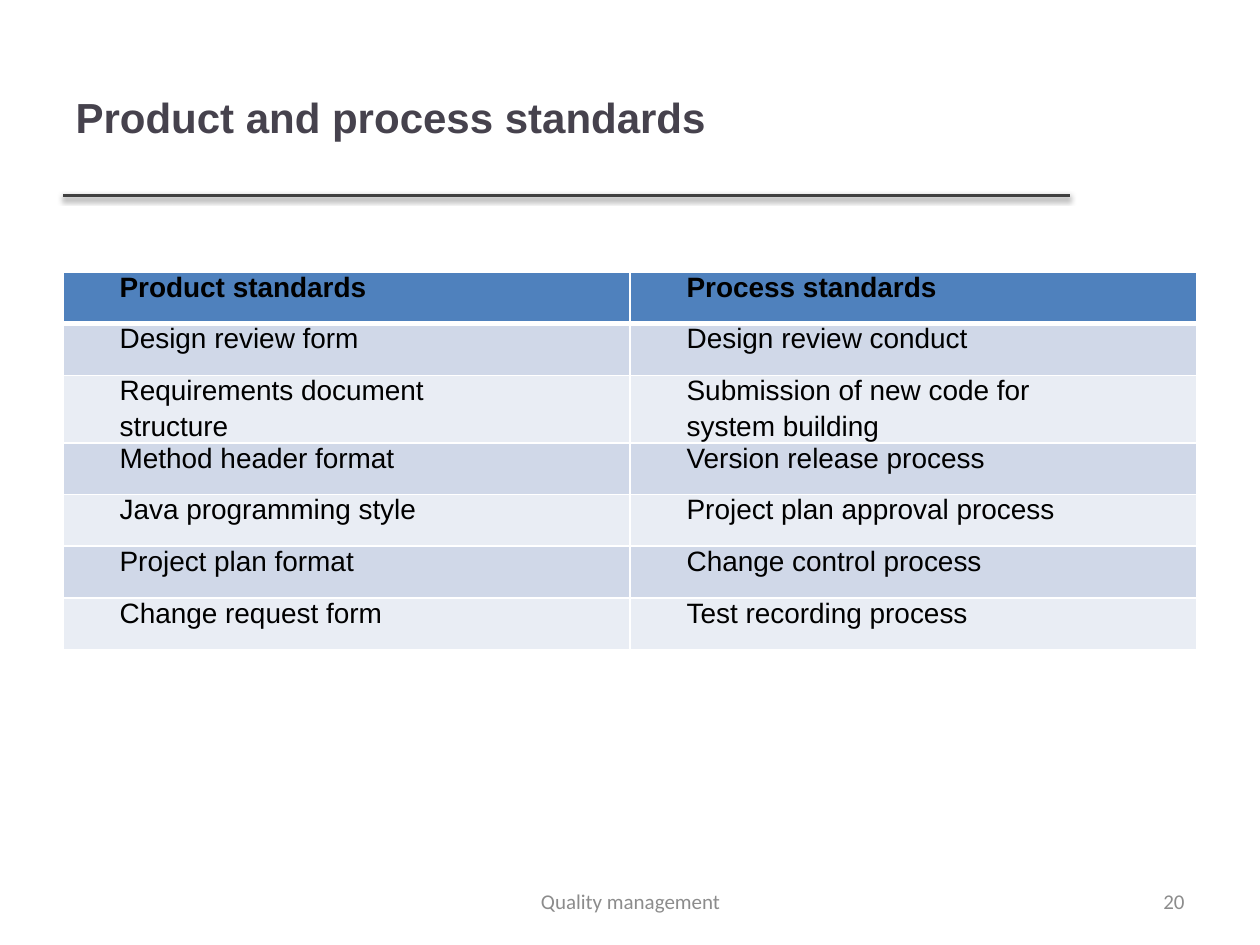
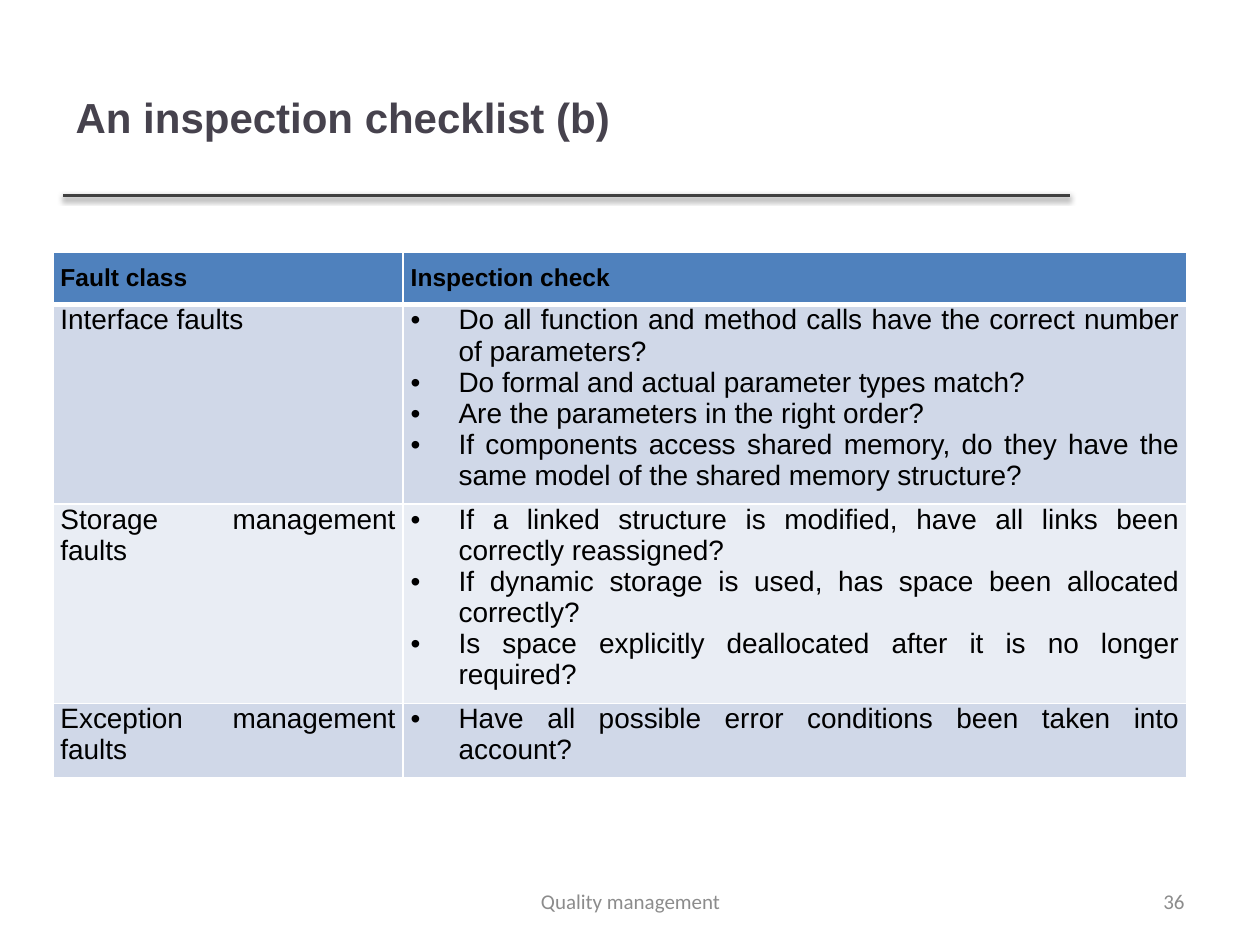
"""Build two quality management slides, each with a title, a rule, a table and a footer."""
from lxml import etree
from pptx import Presentation
from pptx.dml.color import RGBColor
from pptx.enum.shapes import MSO_CONNECTOR
from pptx.enum.text import MSO_ANCHOR, MSO_AUTO_SIZE, PP_ALIGN
from pptx.oxml import parse_xml
from pptx.oxml.ns import nsdecls, qn
from pptx.util import Inches, Pt

TITLE_COLOR = RGBColor(0x46, 0x42, 0x4D)
RULE_COLOR = RGBColor(0x40, 0x40, 0x40)
FOOTER_COLOR = RGBColor(0x8C, 0x8C, 0x8C)
TEXT_COLOR = RGBColor(0x00, 0x00, 0x00)
HEADER_FILL = RGBColor(0x4F, 0x81, 0xBD)
BAND_FILLS = [RGBColor(0xE9, 0xED, 0xF4), RGBColor(0xD0, 0xD8, 0xE8)]
BORDER_COLOR = RGBColor(0xFF, 0xFF, 0xFF)

RULE_SHADOW = f"""<a:effectLst {nsdecls("a")}>
  <a:outerShdw blurRad="{Pt(3.1)}" dist="{Pt(1.6)}" dir="5400000" rotWithShape="0">
    <a:srgbClr val="000000"><a:alpha val="38000"/></a:srgbClr>
  </a:outerShdw>
</a:effectLst>"""

STANDARDS = {
    "title": "Product and process standards",
    "number": "20",
    "position": (0.5, 2.16),
    "columns": [4.5, 4.5],
    "heights": [0.41, 0.41, 0.53, 0.41, 0.41, 0.41, 0.41],
    "side_margin": 0.07,
    "header_margin": 0,
    "bottom_margin": 0,
    "header_size": 16,
    "space_after": 3,
    "first_column_align": PP_ALIGN.LEFT,
    "indents": [(0, 0.38), (0, 0.38)],
    "bulleted": False,
    "rows": [
        (["Product standards"], ["Process standards"]),
        (["Design review form"], ["Design review conduct"]),
        (["Requirements document", "structure"],
         ["Submission of new code for", "system building"]),
        (["Method header format"], ["Version release process"]),
        (["Java programming style"], ["Project plan approval process"]),
        (["Project plan format"], ["Change control process"]),
        (["Change request form"], ["Test recording process"]),
    ],
}
CHECKLIST = {
    "title": "An inspection checklist (b)",
    "number": "36",
    "position": (0.42, 2),
    "columns": [2.78, 6.22],
    "heights": [0.41, 1.58, 1.58, 0.59],
    "side_margin": 0.06,
    "header_margin": 0.1,
    "bottom_margin": 0.1,
    "header_size": 14,
    "space_after": 0,
    "first_column_align": PP_ALIGN.JUSTIFY,
    "indents": [(0, 0), (0.38, -0.38)],
    "bulleted": True,
    "rows": [
        (["Fault class"], ["Inspection check"]),
        (["Interface faults"],
         ["Do all function and method calls have the correct number of parameters?",
          "Do formal and actual parameter types match?",
          "Are the parameters in the right order?",
          "If components access shared memory, do they have the same model of "
          "the shared memory structure?"]),
        (["Storage management faults"],
         ["If a linked structure is modified, have all links been correctly reassigned?",
          "If dynamic storage is used, has space been allocated correctly?",
          "Is space explicitly deallocated after it is no longer required?"]),
        (["Exception management faults"],
         ["Have all possible error conditions been taken into account?"]),
    ],
}


def format_runs(paragraph, name, size, color, bold=False):
    for run in paragraph.runs:
        run.font.name = name
        run.font.size = Pt(size)
        run.font.color.rgb = color
        run.font.bold = bold


def add_borders(cell, bottom_width):
    properties = cell._tc.get_or_add_tcPr()
    widths = {"lnL": 1, "lnR": 1, "lnT": 1, "lnB": bottom_width}
    for index, (edge, width) in enumerate(widths.items()):
        line = etree.Element(qn(f"a:{edge}"), w=str(Pt(width)))
        fill = etree.SubElement(line, qn("a:solidFill"))
        etree.SubElement(fill, qn("a:srgbClr"), val=str(BORDER_COLOR))
        properties.insert(index, line)


presentation = Presentation()
presentation.slide_width = Inches(10)
presentation.slide_height = Inches(7.5)

for content in (STANDARDS, CHECKLIST):
    slide = presentation.slides.add_slide(presentation.slide_layouts[5])

    title = slide.shapes.title
    title.left, title.top = Inches(0.5), Inches(0.3)
    title.width, title.height = Inches(7.98), Inches(1.25)
    title.text_frame.text = content["title"]
    title.text_frame.auto_size = MSO_AUTO_SIZE.NONE
    title.text_frame.vertical_anchor = MSO_ANCHOR.MIDDLE
    title.text_frame.paragraphs[0].alignment = PP_ALIGN.LEFT
    format_runs(title.text_frame.paragraphs[0], "Arial", 24, TITLE_COLOR, True)

    rule = slide.shapes.add_connector(
        MSO_CONNECTOR.STRAIGHT, Inches(0.5), Inches(1.55), Inches(8.49), Inches(1.55))
    rule.line.color.rgb = RULE_COLOR
    rule.line.width = Pt(2)
    rule._element.spPr.append(parse_xml(RULE_SHADOW))

    left, top = content["position"]
    table = slide.shapes.add_table(
        len(content["rows"]), 2, Inches(left), Inches(top),
        Inches(sum(content["columns"])), Inches(sum(content["heights"]))).table
    for column, width in zip(table.columns, content["columns"]):
        column.width = Inches(width)
    for row, height in zip(table.rows, content["heights"]):
        row.height = Inches(height)

    for row_index, row_texts in enumerate(content["rows"]):
        is_header = row_index == 0
        for column_index, lines in enumerate(row_texts):
            cell = table.cell(row_index, column_index)
            cell.margin_left = cell.margin_right = Inches(content["side_margin"])
            cell.margin_top = Inches(content["header_margin"] if is_header else 0)
            cell.margin_bottom = Inches(content["bottom_margin"])
            cell.fill.solid()
            cell.fill.fore_color.rgb = HEADER_FILL if is_header else BAND_FILLS[row_index % 2]
            add_borders(cell, 3 if is_header else 1)

            has_bullets = content["bulleted"] and column_index == 1 and not is_header
            margin, indent = content["indents"][column_index]
            if is_header and content["bulleted"]:
                margin, indent = 0, 0
            cell.text_frame.text = "\n".join(lines)
            for paragraph in cell.text_frame.paragraphs:
                properties = paragraph._p.get_or_add_pPr()
                properties.set("marL", str(Inches(margin)))
                properties.set("indent", str(Inches(indent)))
                if has_bullets:
                    etree.SubElement(properties, qn("a:buFont"), typeface="Arial")
                    etree.SubElement(properties, qn("a:buChar"), char="•")
                paragraph.space_after = Pt(content["space_after"])
                paragraph.alignment = PP_ALIGN.JUSTIFY
                if column_index == 0 and not is_header:
                    paragraph.alignment = content["first_column_align"]
                size = content["header_size"] if is_header else 16
                format_runs(paragraph, "Arial", size, TEXT_COLOR, is_header)

    for text, left, width, alignment in (
            (content["number"], 7.17, 2.33, PP_ALIGN.RIGHT),
            ("Quality management", 3.42, 3.17, PP_ALIGN.CENTER)):
        footer = slide.shapes.add_textbox(
            Inches(left), Inches(6.95), Inches(width), Inches(0.4))
        footer.text_frame.text = text
        footer.text_frame.word_wrap = True
        footer.text_frame.vertical_anchor = MSO_ANCHOR.MIDDLE
        paragraph = footer.text_frame.paragraphs[0]
        paragraph.alignment = alignment
        format_runs(paragraph, "Calibri", 12, FOOTER_COLOR)

presentation.save("out.pptx")
